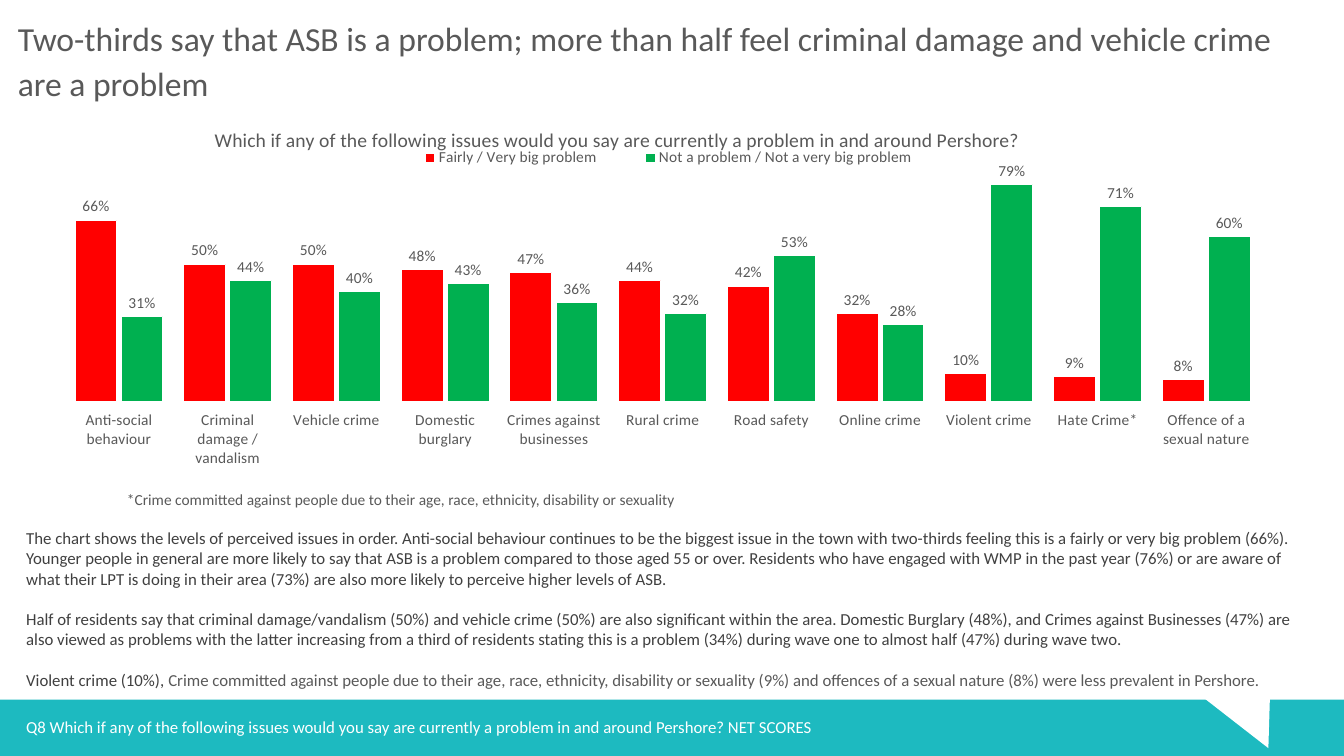
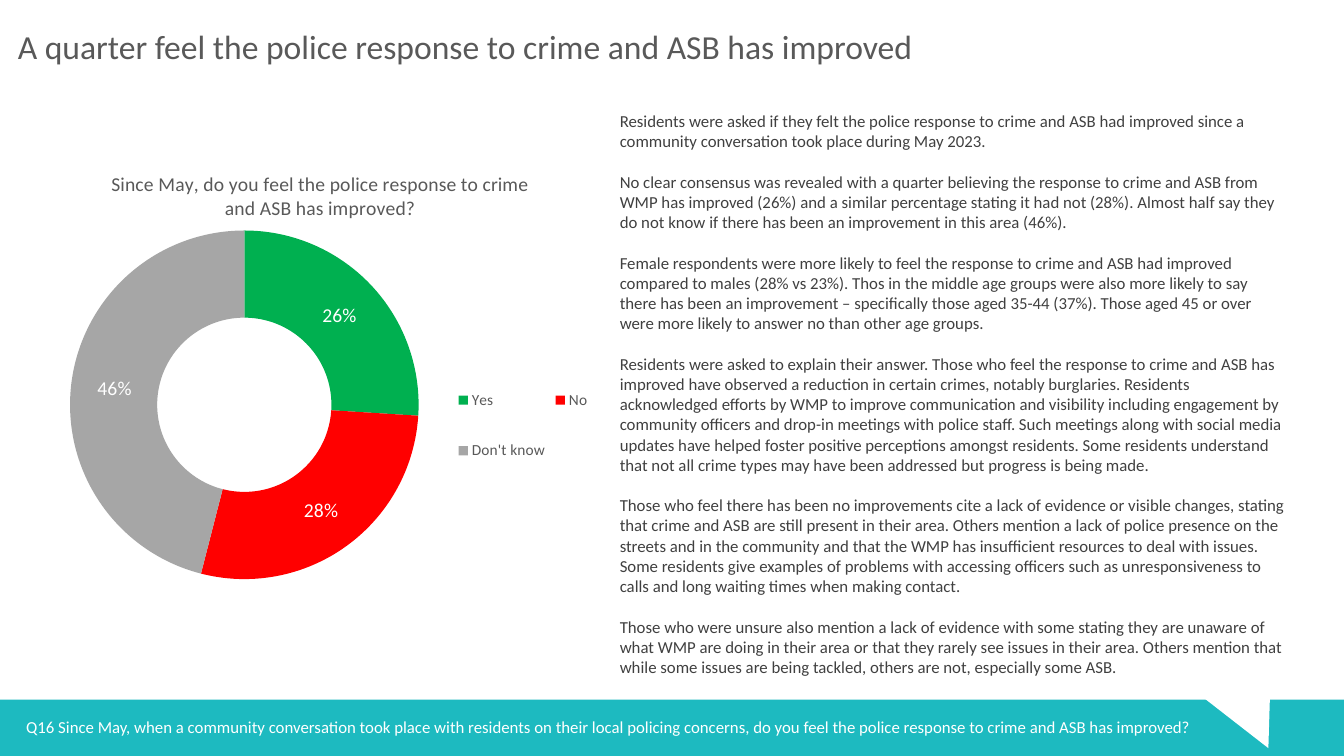
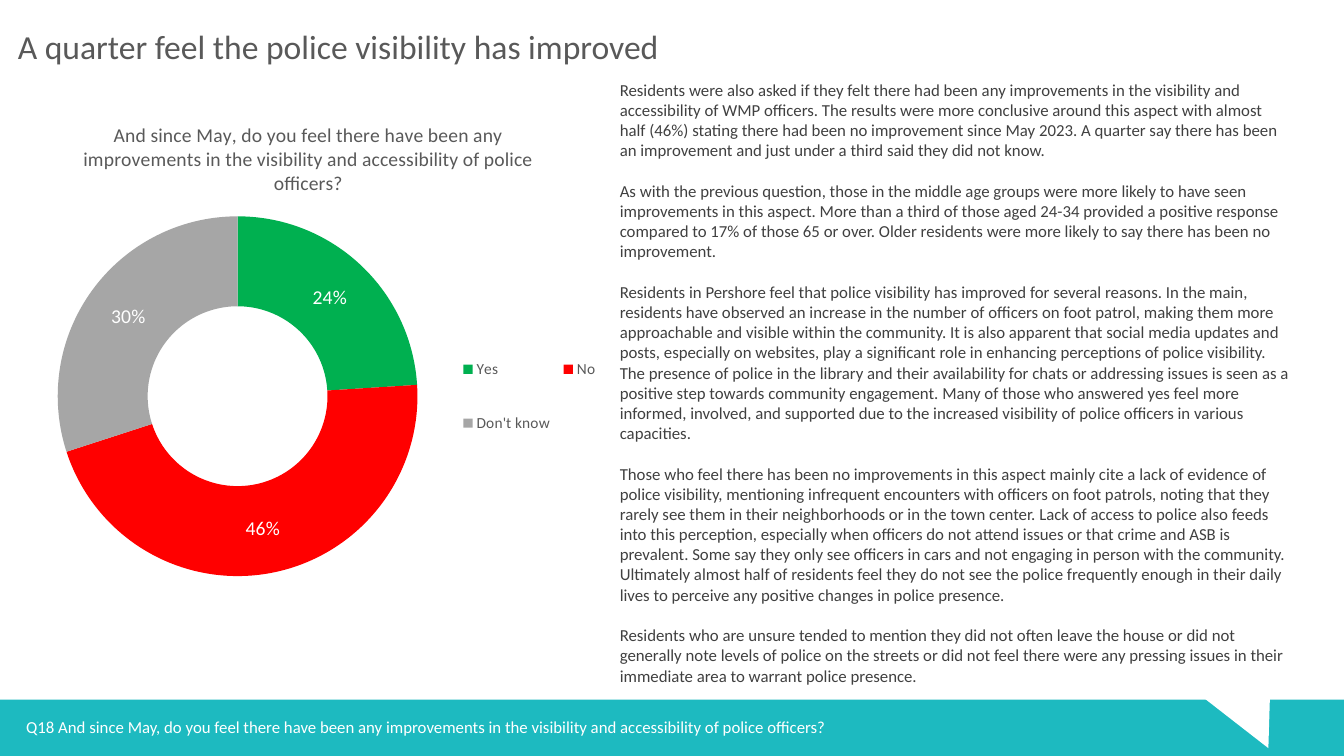
from lxml import etree
from pptx import Presentation
from pptx.chart.data import CategoryChartData
from pptx.dml.color import RGBColor
from pptx.enum.chart import (XL_CHART_TYPE as ChartType, XL_LABEL_POSITION as LabelPos,
                             XL_LEGEND_POSITION as LegendPos, XL_TICK_MARK as Tick)
from pptx.enum.shapes import MSO_SHAPE as Shape
from pptx.enum.text import MSO_ANCHOR as Anchor, MSO_AUTO_SIZE as AutoSize
from pptx.oxml.ns import qn
from pptx.util import Cm, Pt

FONT = "Calibri"
TEAL = RGBColor(0x1D, 0xBA, 0xC0)
WHITE = RGBColor(0xFF, 0xFF, 0xFF)
DARK = RGBColor(0x40, 0x40, 0x40)
GREY = RGBColor(0x59, 0x59, 0x59)
SILVER = RGBColor(0xA6, 0xA6, 0xA6)
RED = RGBColor(0xFF, 0x00, 0x00)
GREEN = RGBColor(0x00, 0xB0, 0x50)

SLIDE_W, SLIDE_H = 33.87, 19.05
BAND_TOP = 17.63
LINE_GAP = 14.6  # points between paragraphs, one line of body text

# Content: a paragraph is a string, or a list of (text, colour) runs.
# Boxes are left, top, width, height in cm; layouts are fractions of the chart.
ISSUES = {
    "title": "Two-thirds say that ASB is a problem; more than half feel criminal damage and "
             "vehicle crime are a problem",
    "title_height": 2.24,
    "footer": "Q8 Which if any of the following issues would you say are currently a problem in "
              "and around Pershore? NET SCORES",
    "body_box": (0.41, 13.18, 32.59, 4.37),
    "body": [
        "The chart shows the levels of perceived issues in order. Anti-social behaviour continues "
        "to be the biggest issue in the town with two-thirds feeling this is a fairly or very big "
        "problem (66%). Younger people in general are more likely to say that ASB is a problem "
        "compared to those aged 55 or over. Residents who have engaged with WMP in the past year "
        "(76%) or are aware of what their LPT is doing in their area (73%) are also more likely "
        "to perceive higher levels of ASB.",
        "Half of residents say that criminal damage/vandalism (50%) and vehicle crime (50%) are "
        "also significant within the area. Domestic Burglary (48%), and Crimes against Businesses "
        "(47%) are also viewed as problems with the latter increasing from a third of residents "
        "stating this is a problem (34%) during wave one to almost half (47%) during wave two.",
        [("Violent crime (10%), ", DARK),
         ("Crime committed against people due to their age, race, ethnicity, disability or "
          "sexuality (9%) and offences of a sexual nature (8%) were less prevalent in Pershore.",
          GREY)],
    ],
    "footnote": "*Crime committed against people due to their age, race, ethnicity, disability "
                "or sexuality",
    "footnote_box": (2.95, 12.22, 15.8, 0.74),
    "chart": {
        "box": (1.32, 2.92, 30.76, 8.86),
        "title": "Which if any of the following issues would you say are currently a problem in "
                 "and around Pershore?",
        "title_at": (0.13, 0.02),
        "plot": (0.01, 0.11, 0.98, 0.71),
        "legend": (0.27, 0.08, 0.47, 0.08),
        "categories": ["Anti-social behaviour", "Criminal damage / vandalism", "Vehicle crime",
                       "Domestic burglary", "Crimes against businesses", "Rural crime",
                       "Road safety", "Online crime", "Violent crime", "Hate Crime*",
                       "Offence of a sexual nature"],
        "series": [
            ("Fairly / Very big problem", RED,
             [0.66, 0.5, 0.5, 0.48, 0.47, 0.44, 0.42, 0.32, 0.1, 0.09, 0.08]),
            ("Not a problem / Not a very big problem", GREEN,
             [0.31, 0.44, 0.4, 0.43, 0.36, 0.32, 0.53, 0.28, 0.79, 0.71, 0.6]),
        ],
    },
}

ANSWERS = [("Yes", GREEN), ("No", RED), ("Don't know", SILVER)]

RESPONSE = {
    "title": "A quarter feel the police response to crime and ASB has improved",
    "title_height": 1.5,
    "footer": "Q16 Since May, when a community conversation took place with residents on their "
              "local policing concerns, do you feel the police response to crime and ASB has "
              "improved?",
    "body_box": (15.37, 2.67, 17.27, 15.14),
    "body": [
        "Residents were asked if they felt the police response to crime and ASB had improved "
        "since a community conversation took place during May 2023.",
        "No clear consensus was revealed with a quarter believing the response to crime and ASB "
        "from WMP has improved (26%) and a similar percentage stating it had not (28%). Almost "
        "half say they do not know if there has been an improvement in this area (46%).",
        "Female respondents were more likely to feel the response to crime and ASB had improved "
        "compared to males (28% vs 23%). Thos in the middle age groups were also more likely to "
        "say there has been an improvement – specifically those aged 35-44 (37%). Those aged 45 "
        "or over were more likely to answer no than other age groups.",
        "Residents were asked to explain their answer. Those who feel the response to crime and "
        "ASB has improved have observed a reduction in certain crimes, notably burglaries. "
        "Residents acknowledged efforts by WMP to improve communication and visibility including "
        "engagement by community officers and drop-in meetings with police staff. Such meetings "
        "along with social media updates have helped foster positive perceptions amongst "
        "residents. Some residents understand that not all crime types may have been addressed "
        "but progress is being made.",
        "Those who feel there has been no improvements cite a lack of evidence or visible "
        "changes, stating that crime and ASB are still present in their area. Others mention a "
        "lack of police presence on the streets and in the community and that the WMP has "
        "insufficient resources to deal with issues. Some residents give examples of problems "
        "with accessing officers such as unresponsiveness to calls and long waiting times when "
        "making contact.",
        "Those who were unsure also mention a lack of evidence with some stating they are unaware "
        "of what WMP are doing in their area or that they rarely see issues in their area. Others "
        "mention that while some issues are being tackled, others are not, especially some ASB.",
    ],
    "chart": {
        "box": (1.17, 3.96, 14.05, 11.56),
        "title": "Since May, do you feel the police response to crime and ASB has improved?",
        "title_at": (0.11, 0.02),
        "plot": (0.04, 0.16, 0.63, 0.76),
        "legend": (0.73, 0.44, 0.25, 0.29),
        "values": [0.26, 0.28, 0.46],
    },
}

VISIBILITY = {
    "title": "A quarter feel the police visibility has improved",
    "title_height": 1.52,
    "footer": "Q18 And since May, do you feel there have been any improvements in the visibility "
              "and accessibility of police officers?",
    "body_box": (15.37, 1.88, 17.45, 16.15),
    "body": [
        "Residents were also asked if they felt there had been any improvements in the visibility "
        "and accessibility of WMP officers. The results were more conclusive around this aspect "
        "with almost half (46%) stating there had been no improvement since May 2023. A quarter "
        "say there has been an improvement and just under a third said they did not know.",
        "As with the previous question, those in the middle age groups were more likely to have "
        "seen improvements in this aspect. More than a third of those aged 24-34 provided a "
        "positive response compared to 17% of those 65 or over. Older residents were more likely "
        "to say there has been no improvement.",
        "Residents in Pershore feel that police visibility has improved for several reasons. In "
        "the main, residents have observed an increase in the number of officers on foot patrol, "
        "making them more approachable and visible within the community. It is also apparent that "
        "social media updates and posts, especially on websites, play a significant role in "
        "enhancing perceptions of police visibility. The presence of police in the library and "
        "their availability for chats or addressing issues is seen as a positive step towards "
        "community engagement. Many of those who answered yes feel more informed, involved, and "
        "supported due to the increased visibility of police officers in various capacities.",
        "Those who feel there has been no improvements in this aspect mainly cite a lack of "
        "evidence of police visibility, mentioning infrequent encounters with officers on foot "
        "patrols, noting that they rarely see them in their neighborhoods or in the town center. "
        "Lack of access to police also feeds into this perception, especially when officers do "
        "not attend issues or that crime and ASB is prevalent. Some say they only see officers in "
        "cars and not engaging in person with the community. Ultimately almost half of residents "
        "feel they do not see the police frequently enough in their daily lives to perceive any "
        "positive changes in police presence.",
        "Residents who are unsure tended to mention they did not often leave the house or did not "
        "generally note levels of police on the streets or did not feel there were any pressing "
        "issues in their immediate area to warrant police presence.",
    ],
    "chart": {
        "box": (0.36, 2.72, 15.01, 12.42),
        "title": "And since May, do you feel there have been any improvements in the visibility "
                 "and accessibility of police officers?",
        "title_at": (0.11, 0.02),
        "plot": (0.07, 0.22, 0.61, 0.73),
        "legend": (0.74, 0.44, 0.25, 0.29),
        "values": [0.24, 0.46, 0.3],
    },
}


def cm(box):
    return [Cm(v) for v in box]


def style(font, size, color):
    font.name, font.size, font.bold = FONT, Pt(size), False
    font.color.rgb = color


def add_text(s, box, paragraphs, size, color):
    sp = s.shapes.add_textbox(*cm(box))
    tf = sp.text_frame
    tf.word_wrap = True
    tf.auto_size = AutoSize.SHAPE_TO_FIT_TEXT
    for i, content in enumerate(paragraphs):
        p = tf.paragraphs[0] if i == 0 else tf.add_paragraph()
        if i:
            p.space_before = Pt(LINE_GAP)
        for text, run_color in [(content, color)] if isinstance(content, str) else content:
            r = p.add_run()
            r.text = text
            style(r.font, size, run_color)
    return tf


def add_band(s):
    group = s.shapes.add_group_shape()
    for kind, box, color, angle in (
            (Shape.RECTANGLE, (0, BAND_TOP, SLIDE_W, SLIDE_H - BAND_TOP), TEAL, 0),
            (Shape.ISOSCELES_TRIANGLE, (30.63, 17.09, 1.88, 1.85), WHITE, 154.8)):
        sp = group.shapes.add_shape(kind, *cm(box))
        sp.shadow.inherit = False
        sp.fill.solid()
        sp.fill.fore_color.rgb = color
        sp.line.fill.background()
        sp.rotation = angle


def set_layout(part, values, inner=False):
    """Place a chart title, legend or plot area by fractions of the chart."""
    layout = part.find(qn("c:layout"))
    if layout is None:
        layout = etree.Element(qn("c:layout"))
        if part.tag == qn("c:plotArea"):
            part.insert(0, layout)
        else:
            part.find(qn("c:overlay")).addprevious(layout)
    manual = etree.SubElement(layout, qn("c:manualLayout"))
    settings = [("layoutTarget", "inner")] if inner else []
    settings += [("xMode", "edge"), ("yMode", "edge"), *zip("xywh", values)]
    for name, value in settings:
        etree.SubElement(manual, qn(f"c:{name}")).set("val", str(value))


def add_chart(s, kind, spec, categories, series):
    data = CategoryChartData(number_format="0%")
    data.categories = categories
    for name, values in series:
        data.add_series(name, values)
    chart = s.shapes.add_chart(kind, *cm(spec["box"]), data).chart
    chart.font.name, chart.font.size = FONT, Pt(10)

    # Title and legend
    tf = chart.chart_title.text_frame
    tf.text = spec["title"]
    style(tf.paragraphs[0].runs[0].font, 14, GREY)
    chart.has_legend = True
    chart.legend.position = LegendPos.RIGHT
    chart.legend.include_in_layout = False
    style(chart.legend.font, 11, GREY)

    root = chart.element.chart
    title = root.find(qn("c:title"))
    if title.find(qn("c:overlay")) is None:
        overlay = etree.Element(qn("c:overlay"))
        overlay.set("val", "0")
        title.find(qn("c:tx")).addnext(overlay)
    set_layout(title, spec["title_at"])
    set_layout(root.find(qn("c:legend")), spec["legend"])
    set_layout(root.find(qn("c:plotArea")), spec["plot"], inner=True)
    return chart


def add_labels(owner, size, color):
    labels = owner.data_labels
    labels.show_value = True
    labels.number_format, labels.number_format_is_linked = "0%", False
    style(labels.font, size, color)
    return labels


def add_columns(s, spec):
    chart = add_chart(s, ChartType.COLUMN_CLUSTERED, spec, spec["categories"],
                      [(name, values) for name, _, values in spec["series"]])
    plot = chart.plots[0]
    plot.vary_by_categories = False
    plot.gap_width, plot.overlap = 50, -10
    for ser, (_, color, _) in zip(plot.series, spec["series"]):
        ser.format.fill.solid()
        ser.format.fill.fore_color.rgb = color
        ser.format.line.color.rgb = WHITE
        ser.format.line.width = Pt(0.75)
        add_labels(ser, 11, GREY).position = LabelPos.OUTSIDE_END
    axis = chart.value_axis
    axis.minimum_scale, axis.maximum_scale = 0, 0.9
    axis.has_major_gridlines = False
    axis.visible = False
    axis = chart.category_axis
    axis.major_tick_mark = Tick.OUTSIDE
    axis.format.line.fill.background()
    style(axis.tick_labels.font, 11, GREY)


def add_doughnut(s, spec):
    chart = add_chart(s, ChartType.DOUGHNUT, spec, [name for name, _ in ANSWERS],
                      [("Series 1", spec["values"])])
    plot = chart.plots[0]
    ser = plot.series[0]
    for i, (_, color) in enumerate(ANSWERS):
        point = ser.points[i].format
        point.fill.solid()
        point.fill.fore_color.rgb = color
        point.line.fill.background()
    add_labels(ser, 14, WHITE)
    next(chart.element.iter(qn("c:holeSize"))).set("val", "62")


def add_slide(prs, content):
    s = prs.slides.add_slide(prs.slide_layouts[6])
    add_band(s)
    add_text(s, (0.41, 17.94, 29.92, 0.76), [content["footer"]], 12, WHITE)
    tf = add_text(s, (0.2, 0.36, 32.99, content["title_height"]), [content["title"]], 24, GREY)
    tf.auto_size = AutoSize.NONE
    tf.vertical_anchor = Anchor.MIDDLE
    tf.paragraphs[0].line_spacing = 1.1
    add_text(s, content["body_box"], content["body"], 12, DARK)
    if "footnote" in content:
        add_text(s, content["footnote_box"], [content["footnote"]], 11, GREY)
    draw = add_columns if "series" in content["chart"] else add_doughnut
    draw(s, content["chart"])


def main():
    prs = Presentation()
    prs.slide_width, prs.slide_height = Cm(SLIDE_W), Cm(SLIDE_H)
    for content in (ISSUES, RESPONSE, VISIBILITY):
        add_slide(prs, content)
    prs.save("out.pptx")


if __name__ == "__main__":
    main()
